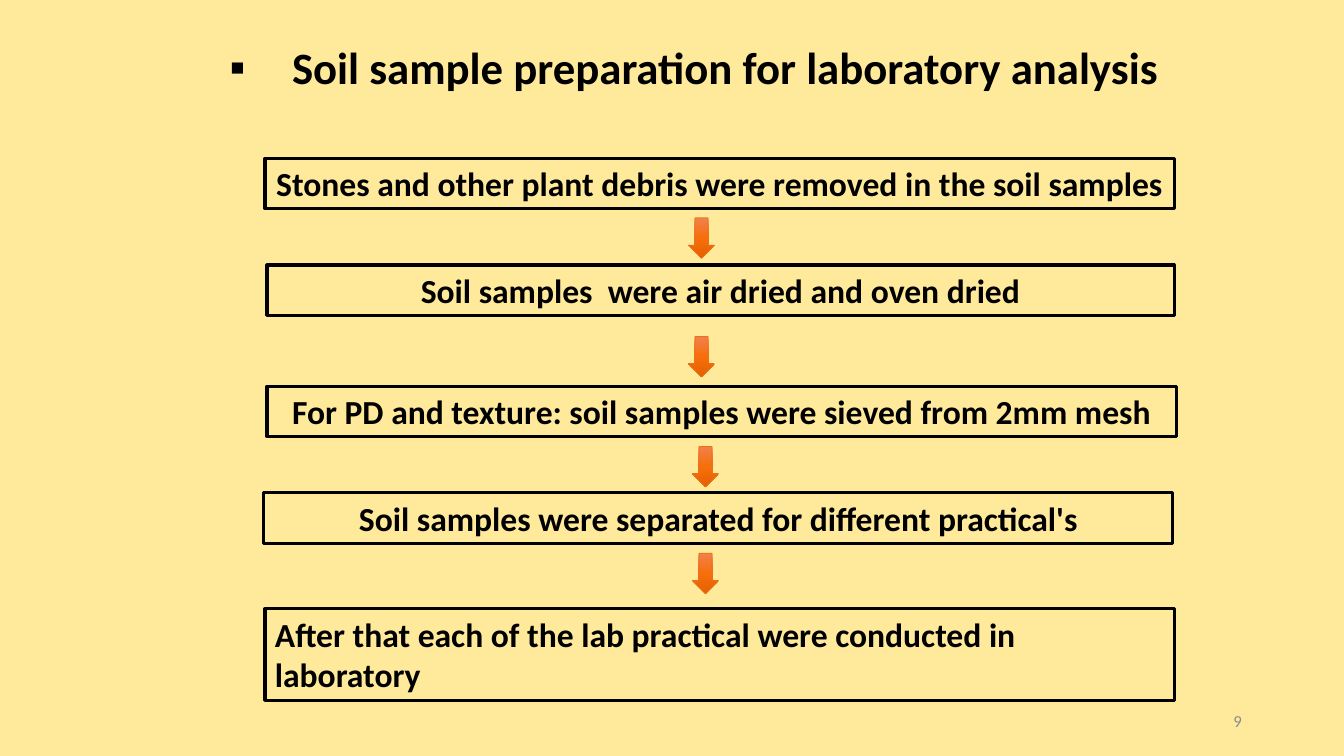
from copy import deepcopy

from lxml import etree
from pptx import Presentation
from pptx.dml.color import RGBColor
from pptx.enum.shapes import MSO_SHAPE
from pptx.enum.text import MSO_ANCHOR, MSO_AUTO_SIZE, PP_ALIGN
from pptx.oxml.ns import qn
from pptx.util import Cm, Pt

RECTANGLE = MSO_SHAPE.RECTANGLE
DOWN_ARROW = MSO_SHAPE.DOWN_ARROW
MIDDLE = MSO_ANCHOR.MIDDLE
TOP = MSO_ANCHOR.TOP
GROW = MSO_AUTO_SIZE.SHAPE_TO_FIT_TEXT
LEFT, CENTER, RIGHT = PP_ALIGN.LEFT, PP_ALIGN.CENTER, PP_ALIGN.RIGHT

FONT = "Calibri"
COLORS = {
    "background": "FFEA9C",
    "text": "000000",
    "number": "8C8C8C",
    "arrow_line": "EC7016",
    "arrow_top": "F0814D",
    "arrow_middle": "F76E0B",
    "arrow_bottom": "E56000",
}

STEPS = [
    (6.68, 3.99, 22.91, 1.27, CENTER,
     "Stones and other plant debris were removed in the soil samples"),
    (6.73, 6.68, 22.86, 1.27, CENTER,
     "Soil samples  were air dried and oven dried"),
    (6.73, 9.73, 22.91, 1.27, CENTER,
     "For PD and texture: soil samples were sieved from 2mm mesh"),
    (6.65, 12.42, 22.91, 1.27, CENTER,
     "Soil samples were separated for different practical's"),
    (6.68, 15.34, 22.91, 2.31, LEFT,
     "After that each of the lab practical were conducted in laboratory"),
]
ARROWS = [(17.35, 5.49), (17.35, 8.48), (17.45, 11.25), (17.45, 13.94)]


def color(name):
    return RGBColor.from_string(COLORS[name])


class SlideBuilder:
    def __init__(self, presentation):
        self.slide = presentation.slides.add_slide(presentation.slide_layouts[6])
        background = self.slide.background.fill
        background.solid()
        background.fore_color.rgb = color("background")

    def set_text(self, shape, text, size, alignment, name="text", bold=True):
        frame = shape.text_frame
        frame.word_wrap = True
        paragraph = frame.paragraphs[0]
        paragraph.text = text
        paragraph.alignment = alignment
        font = paragraph.font
        font.name, font.size, font.bold = FONT, Pt(size), bold
        font.color.rgb = color(name)

    def text_box(self, left, top, width, height):
        shape = self.slide.shapes.add_textbox(
            Cm(left), Cm(top), Cm(width), Cm(height))
        shape.text_frame.vertical_anchor = MIDDLE
        return shape

    def title(self, text):
        shape = self.text_box(5.54, 0.76, 24.13, 2.01)
        paragraph = shape.text_frame.paragraphs[0]
        paragraph.line_spacing = 0.9
        properties = paragraph._p.get_or_add_pPr()
        properties.set("marL", str(Cm(1.57)))
        properties.set("indent", str(-Cm(1.57)))
        etree.SubElement(properties, qn("a:buFont"), typeface="Arial")
        etree.SubElement(properties, qn("a:buChar"), char="▪")
        self.set_text(shape, text, 32, LEFT)

    def slide_number(self, text):
        shape = self.text_box(23.93, 17.65, 7.62, 1.02)
        self.set_text(shape, text, 12, RIGHT, "number", False)

    def outlined(self, kind, left, top, width, height, line_color, line_width):
        shape = self.slide.shapes.add_shape(
            kind, Cm(left), Cm(top), Cm(width), Cm(height))
        shape.shadow.inherit = False
        shape.line.color.rgb = color(line_color)
        shape.line.width = Pt(line_width)
        return shape

    def step(self, left, top, width, height, alignment, text):
        shape = self.outlined(RECTANGLE, left, top, width, height, "text", 2.25)
        shape.fill.background()
        shape.text_frame.vertical_anchor = TOP
        shape.text_frame.auto_size = GROW
        self.set_text(shape, text, 24, alignment)

    def arrow(self, left, top):
        shape = self.outlined(DOWN_ARROW, left, top, 0.66, 1.02, "arrow_line", 0.5)
        fill = shape.fill
        fill.gradient()
        fill.gradient_angle = 270
        first = shape._element.spPr.find(".//" + qn("a:gs"))
        first.addnext(deepcopy(first))
        names = ("arrow_top", "arrow_middle", "arrow_bottom")
        for index, (stop, name) in enumerate(zip(fill.gradient_stops, names)):
            stop.position = index / 2
            stop.color.rgb = color(name)


def main():
    presentation = Presentation()
    presentation.slide_width = Cm(33.87)
    presentation.slide_height = Cm(19.05)
    builder = SlideBuilder(presentation)
    builder.slide_number("9")
    builder.title("Soil sample preparation for laboratory analysis")
    for step in STEPS:
        builder.step(*step)
    for arrow in ARROWS:
        builder.arrow(*arrow)
    presentation.save("out.pptx")


if __name__ == "__main__":
    main()
